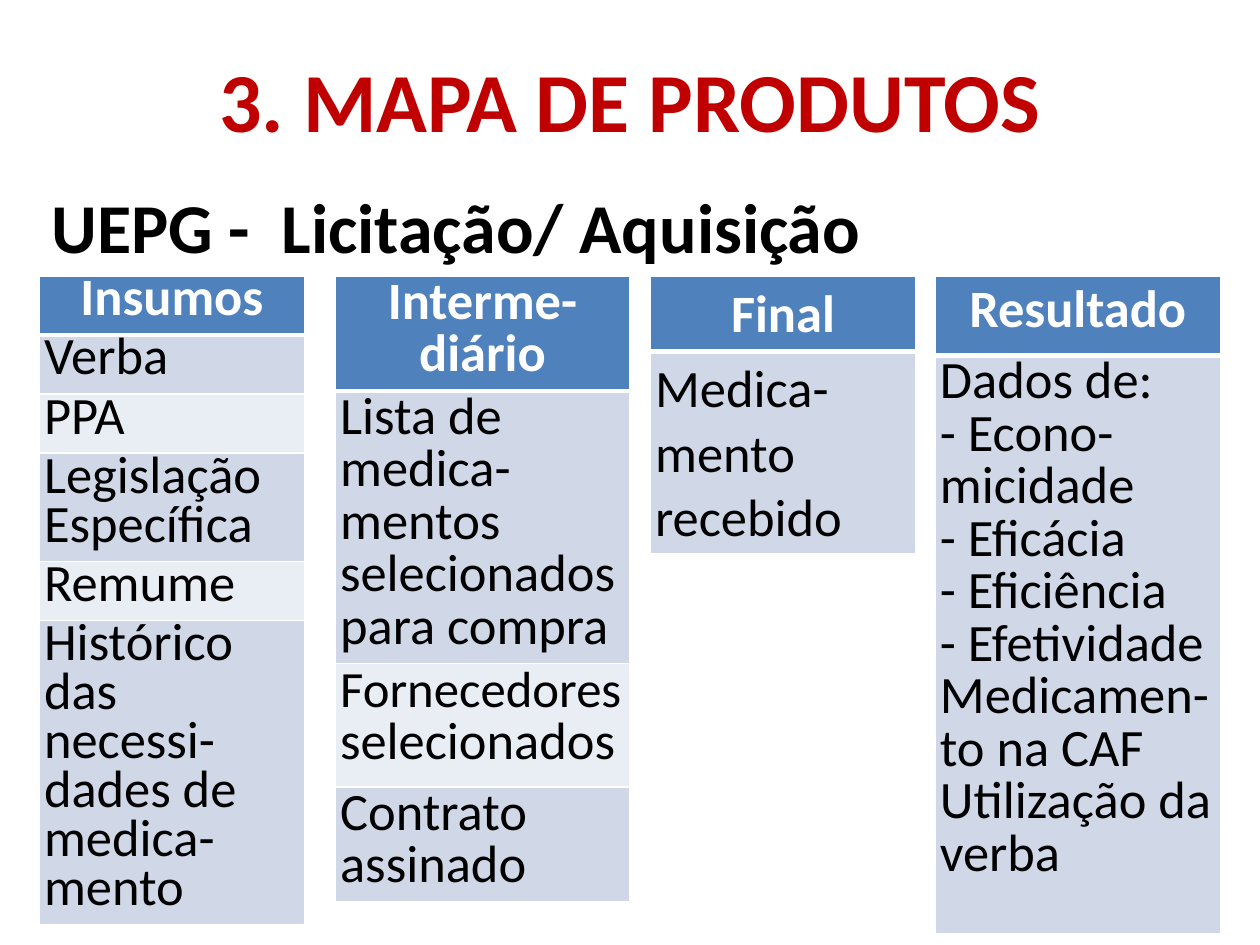
from lxml.etree import SubElement
from pptx import Presentation
from pptx.dml.color import RGBColor
from pptx.enum.text import MSO_ANCHOR, PP_ALIGN
from pptx.oxml.ns import qn
from pptx.util import Inches, Pt

WHITE, BLACK, RED = "FFFFFF", "000000", "C00000"
HEADER, BAND_DARK, BAND_LIGHT = "4F81BD", "D0D8E8", "E9EDF4"


def color(value):
    return RGBColor.from_string(value)


class ProductMap:
    font = "Calibri"
    table_size = 30
    table_top = 2.19

    def __init__(self, deck):
        self.slide = deck.slides.add_slide(deck.slide_layouts[6])

    def style(self, font, size, ink, bold):
        font.name, font.size, font.bold = self.font, Pt(size), bold
        font.color.rgb = color(ink)

    def text(self, left, top, width, height, wording, size, ink,
             align=PP_ALIGN.LEFT, anchor=MSO_ANCHOR.TOP):
        box = self.slide.shapes.add_textbox(
            Inches(left), Inches(top), Inches(width), Inches(height))
        frame = box.text_frame
        frame.word_wrap = True
        frame.vertical_anchor = anchor
        para = frame.paragraphs[0]
        para.text = wording
        para.alignment = align
        self.style(para.font, size, ink, True)

    def borders(self, cell, is_header):
        properties = cell._tc.get_or_add_tcPr()
        for position, side in enumerate(("lnL", "lnR", "lnT", "lnB")):
            width = 3 if is_header and side == "lnB" else 1
            line = SubElement(properties, qn(f"a:{side}"), w=str(Pt(width)))
            fill = SubElement(line, qn("a:solidFill"))
            SubElement(fill, qn("a:srgbClr"), val=WHITE)
            properties.insert(position, line)

    def cell(self, cell, paragraphs, row, spacing, margin, anchor):
        is_header = row == 0
        band = BAND_DARK if row % 2 else BAND_LIGHT
        cell.fill.solid()
        cell.fill.fore_color.rgb = color(HEADER if is_header else band)
        self.borders(cell, is_header)
        cell.margin_left = cell.margin_right = Inches(0.04)
        cell.margin_top = cell.margin_bottom = Inches(margin)
        cell.vertical_anchor = anchor if is_header else MSO_ANCHOR.TOP
        frame = cell.text_frame
        for index, spans in enumerate(paragraphs):
            para = frame.add_paragraph() if index else frame.paragraphs[0]
            para.alignment = PP_ALIGN.CENTER if is_header else PP_ALIGN.LEFT
            if spacing:
                para.line_spacing = Pt(spacing)
            self.style(para.font, self.table_size,
                       WHITE if is_header else BLACK, is_header)
            for wording, size in spans:
                span = para.add_run()
                span.text = wording
                self.style(span.font, size,
                           WHITE if is_header else BLACK, is_header)

    def table(self, left, width, height, rows, spacing=None, margin=0.04,
              anchor=MSO_ANCHOR.TOP):
        """Each row is its height followed by its paragraphs."""
        table = self.slide.shapes.add_table(
            len(rows), 1, Inches(left), Inches(self.table_top),
            Inches(width), Inches(height)).table
        for index, (row_height, *paragraphs) in enumerate(rows):
            table.rows[index].height = Inches(row_height)
            spans = [[(para, self.table_size)] if isinstance(para, str)
                     else para for para in paragraphs]
            self.cell(table.cell(index, 0), spans, index, spacing, margin,
                      anchor)


def main():
    deck = Presentation()
    deck.slide_width, deck.slide_height = Inches(10), Inches(7.5)
    page = ProductMap(deck)

    # Title and process name
    page.text(0.5, 0.16, 9, 1.25, "3. MAPA DE PRODUTOS", 48, RED,
              PP_ALIGN.CENTER, MSO_ANCHOR.MIDDLE)
    page.text(0.31, 1.41, 9.38, 0.77, "UEPG -  Licitação/ Aquisição", 40,
              BLACK)

    # Inputs
    page.table(0.31, 2.11, 5.2, [
        (0.38, "Insumos"),
        (0.38, "Verba"),
        (0.38, "PPA"),
        (0.7, "Legislação Específica"),
        (0.38, "Remume"),
        (2.01, "Histórico das necessi-dades de medica-mento"),
    ], spacing=28, anchor=MSO_ANCHOR.MIDDLE)

    # Intermediate products
    page.table(2.66, 2.34, 4.98, [
        (0.67, "Interme-diário"),
        (1.59, "Lista de medica-mentos selecionados para compra"),
        (0.98, [("Fornecedores ", 29), ("selecionados", 30)]),
        (0.67, "Contrato assinado"),
    ], spacing=30)

    # Final product
    page.table(5.16, 2.11, 2.2, [
        (0.16, "Final"),
        (0.66, "Medica-mento recebido"),
    ], margin=0.05)

    # Results
    page.table(7.42, 2.27, 5.22, [
        (0.63, "Resultado"),
        (4.59, "Dados de:", "- Econo-micidade", "- Eficácia",
         "- Eficiência", "- Efetividade", "Medicamen-to na CAF",
         "Utilização da verba"),
    ], spacing=30, anchor=MSO_ANCHOR.MIDDLE)

    deck.save("out.pptx")


if __name__ == "__main__":
    main()
